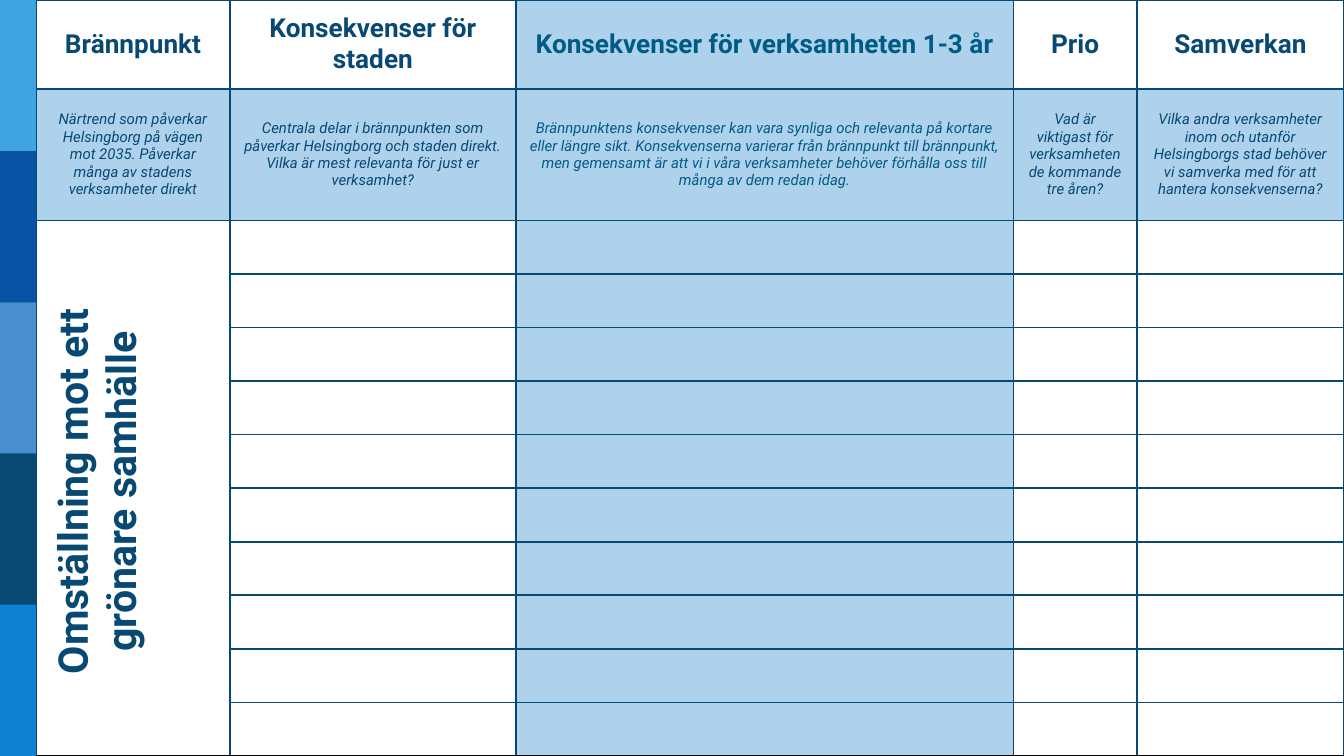
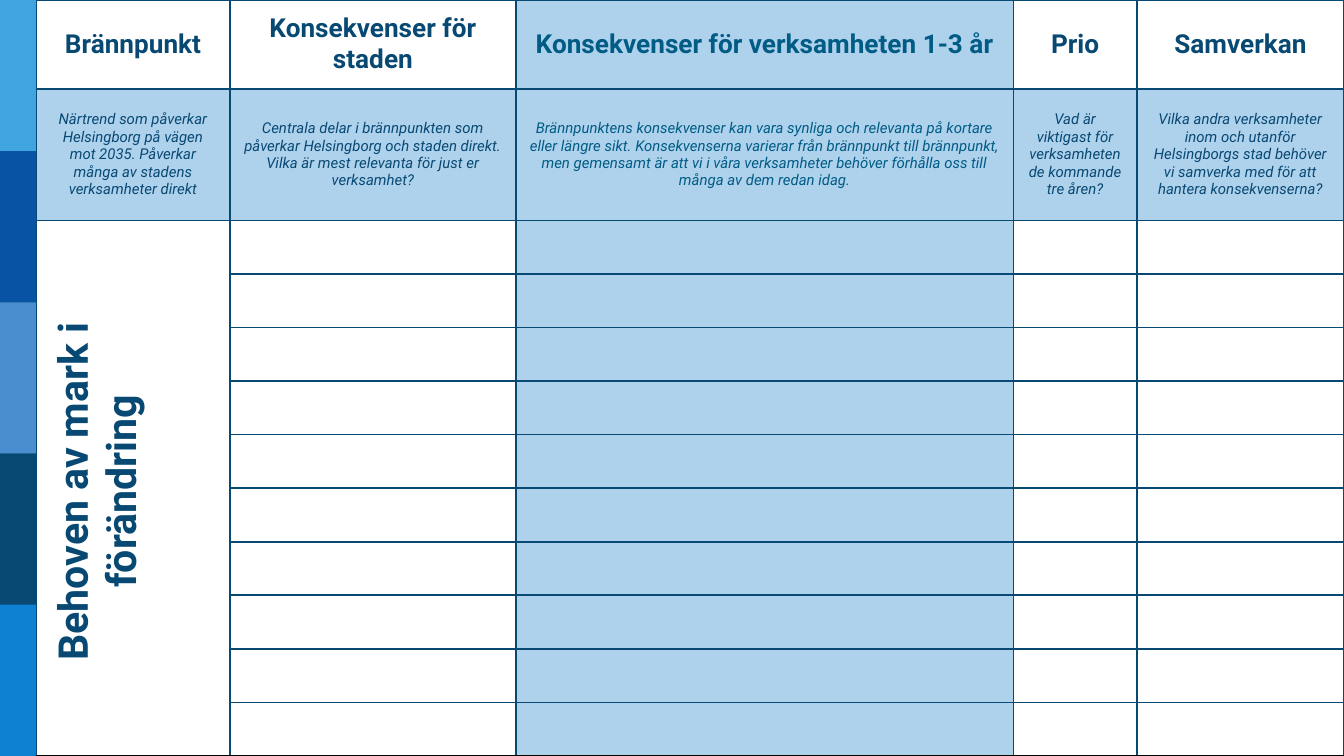
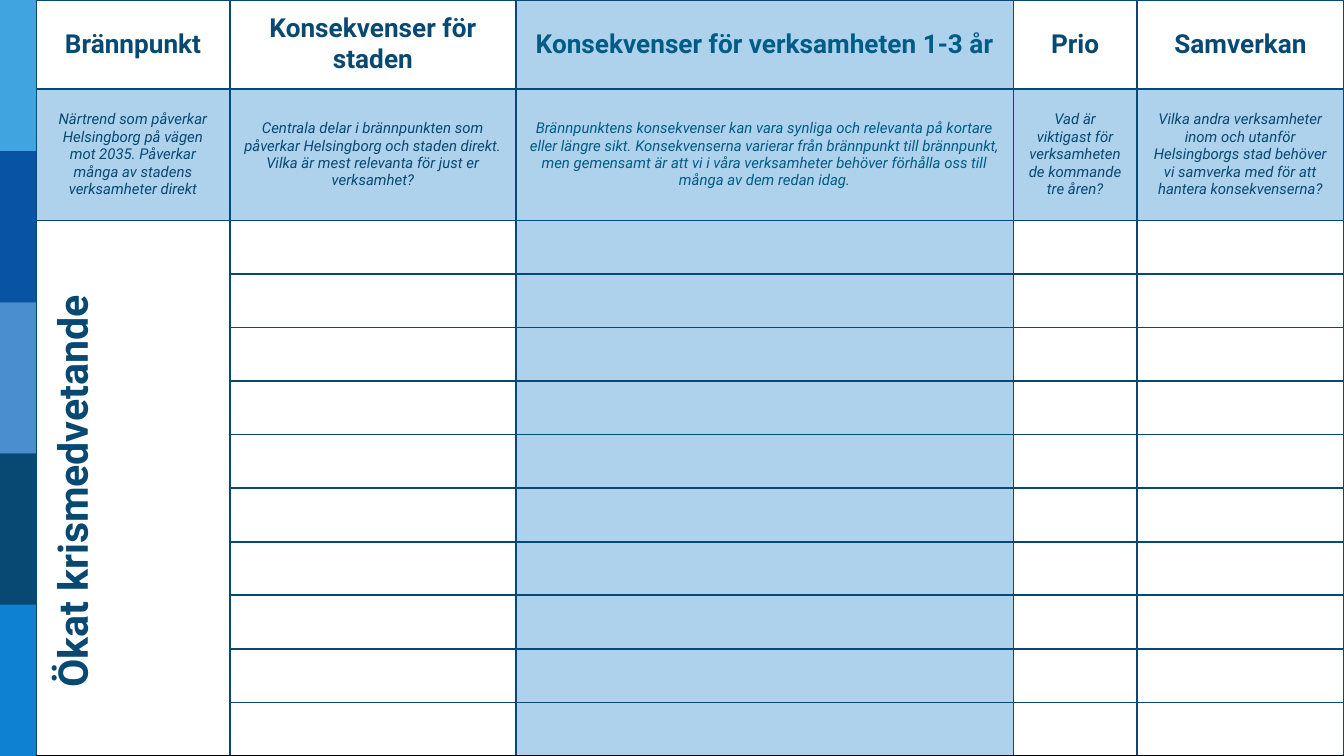
from pptx import Presentation
from pptx.dml.color import RGBColor
from pptx.enum.shapes import MSO_SHAPE as Form
from pptx.enum.text import MSO_ANCHOR as Anchor, PP_ALIGN as Align
from pptx.oxml import parse_xml
from pptx.oxml.ns import nsdecls
from pptx.util import Inches, Pt

NAVY, TEAL, PALE, WHITE, BLACK = "084973", "005C85", "AED1EC", "FFFFFF", "000000"
BANDS = ["40A4E1", "0953A5", "4B8ECF", NAVY, "0F81D3"]
FONT = "Roboto"
SIDE = 0.27
COLS = [1.44, 2.13, 3.7, 0.92, 1.54]
HEAD, GUIDE = 0.66, 0.98
COUNT = 10
FOCUS = 2
HEADS = [
    "Brännpunkt",
    "Konsekvenser för staden",
    "Konsekvenser för verksamheten 1-3 år",
    "Prio",
    "Samverkan",
]
GUIDES = [
    "Närtrend som påverkar Helsingborg på vägen mot 2035. "
    "Påverkar många av stadens verksamheter direkt",
    "Centrala delar i brännpunkten som påverkar Helsingborg och staden direkt. "
    "Vilka är mest relevanta för just er verksamhet?",
    "Brännpunktens konsekvenser kan vara synliga och relevanta på kortare eller "
    "längre sikt. Konsekvenserna varierar från brännpunkt till brännpunkt, men "
    "gemensamt är att vi i våra verksamheter behöver förhålla oss till många av "
    "dem redan idag.",
    "Vad är viktigast för verksamheten de kommande tre åren?",
    "Vilka andra verksamheter inom och utanför Helsingborgs stad behöver vi "
    "samverka med för att hantera konsekvenserna?",
]
TOPICS = [
    "Omställning mot ett\ngrönare samhälle",
    "Behoven av mark i\nförändring",
    "Ökat krismedvetande",
]


def rgb(code):
    """Turn a hex string into a colour."""
    return RGBColor.from_string(code)


class Deck:
    """Hold the shared style and the current slide."""

    def __init__(self):
        """Open a blank wide deck."""
        self.prs = Presentation()
        self.prs.slide_width = Inches(10)
        self.prs.slide_height = Inches(10) * 9 // 16
        self.high = self.prs.slide_height
        self.slide = None

    def page(self):
        """Start a slide with its ground and side bands."""
        self.slide = self.prs.slides.add_slide(self.prs.slide_layouts[6])
        ground = self.slide.background.fill
        ground.solid()
        ground.fore_color.rgb = rgb(NAVY)
        step = self.high // len(BANDS)
        for n, code in enumerate(BANDS):
            self.band(n * step, step, code)

    def band(self, top, high, code):
        """Draw one plain band at the left edge."""
        bar = self.slide.shapes.add_shape(Form.RECTANGLE, 0, top, Inches(SIDE), high)
        bar.shadow.inherit = False
        bar.fill.solid()
        bar.fill.fore_color.rgb = rgb(code)
        bar.line.fill.background()

    def edge(self, cell, base):
        """Rule the four sides of a cell, with its own base colour."""
        props = cell._tc.get_or_add_tcPr()
        for side, code in zip("LRTB", [NAVY, NAVY, NAVY, base]):
            props.append(parse_xml(
                f'<a:ln{side} {nsdecls("a")} w="{Pt(1)}"><a:solidFill>'
                f'<a:srgbClr val="{code}"/></a:solidFill></a:ln{side}>'))

    def cell(self, cell, fill, base=NAVY):
        """Give a cell its margins, borders and fill."""
        cell.margin_left = cell.margin_right = Inches(0.1)
        cell.margin_top = cell.margin_bottom = Inches(0.1)
        cell.vertical_anchor = Anchor.MIDDLE
        self.edge(cell, base)
        cell.fill.solid()
        cell.fill.fore_color.rgb = rgb(fill)
        cell.text_frame.paragraphs[0]._p.get_or_add_endParaRPr().set("sz", "800")

    def text(self, cell, words, size, code=NAVY, bold=True):
        """Write centred words, bold or else italic."""
        para = cell.text_frame.paragraphs[0]
        para.alignment = Align.CENTER
        for n, line in enumerate(words.split("\n")):
            if n:
                para.add_line_break()
            run = para.add_run()
            run.text = line
            font = run.font
            font.name, font.size = FONT, Pt(size)
            font.bold, font.italic = bold, not bold
            font.color.rgb = rgb(code)

    def table(self, topic):
        """Build the work sheet for one topic."""
        rows = COUNT + 2
        grid = self.slide.shapes.add_table(
            rows, len(COLS), Inches(SIDE), 0, Inches(sum(COLS)), self.high).table
        grid.first_row = grid.horz_banding = False
        for col, wide in zip(grid.columns, COLS):
            col.width = Inches(wide)
        rest = (self.high - Inches(HEAD + GUIDE)) // COUNT
        for row, high in zip(grid.rows, [Inches(HEAD), Inches(GUIDE)] + [rest] * COUNT):
            row.height = high
        for r in range(rows):
            for c in range(len(COLS)):
                last = r == rows - 1 or (r == 2 and c == 0)
                fill = PALE if r == 1 or c == FOCUS else WHITE
                self.cell(grid.cell(r, c), fill, BLACK if last else NAVY)
        for c, (head, guide) in enumerate(zip(HEADS, GUIDES)):
            code = TEAL if c == FOCUS else NAVY
            self.text(grid.cell(0, c), head, 14, code)
            self.text(grid.cell(1, c), guide, 8, code, False)
        name = grid.cell(2, 0)
        name.merge(grid.cell(rows - 1, 0))
        name.margin_left = Inches(0.05)
        name._tc.get_or_add_tcPr().set("vert", "vert270")
        self.text(name, topic, 22)


def main():
    """Make one sheet for each topic."""
    deck = Deck()
    for topic in TOPICS:
        deck.page()
        deck.table(topic)
    deck.prs.save("out.pptx")


if __name__ == "__main__":
    main()
